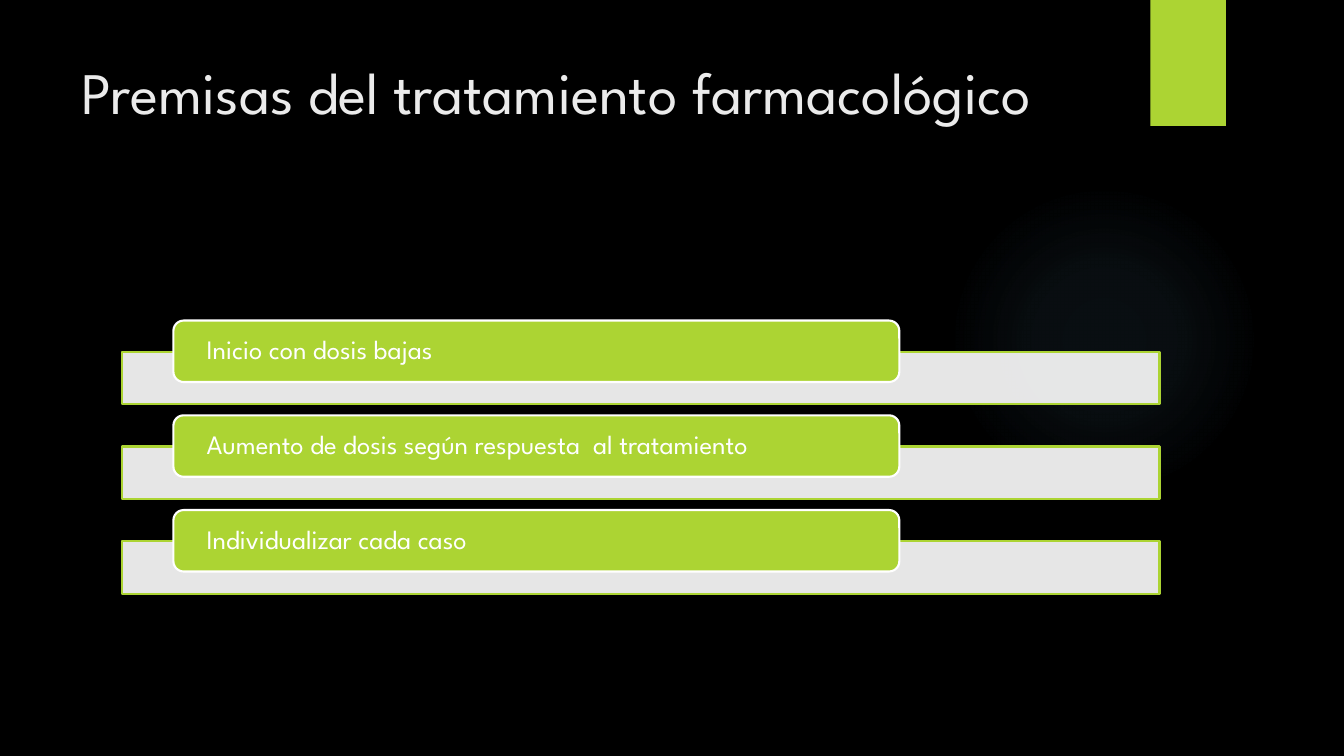
from lxml import etree
from pptx import Presentation
from pptx.dml.color import RGBColor
from pptx.enum.shapes import MSO_SHAPE
from pptx.enum.text import MSO_ANCHOR, MSO_AUTO_SIZE, PP_ALIGN
from pptx.oxml import parse_xml
from pptx.oxml.ns import nsdecls, qn
from pptx.util import Pt

RECTANGLE = MSO_SHAPE.RECTANGLE
ROUNDED = MSO_SHAPE.ROUNDED_RECTANGLE
OVAL = MSO_SHAPE.OVAL
TOP, MIDDLE = MSO_ANCHOR.TOP, MSO_ANCHOR.MIDDLE
LEFT = PP_ALIGN.LEFT
NO_AUTOFIT = MSO_AUTO_SIZE.NONE

BLACK = RGBColor(0x00, 0x00, 0x00)
WHITE = RGBColor(0xFF, 0xFF, 0xFF)
LIME = RGBColor(0xAC, 0xD4, 0x33)
PALE = RGBColor(0xEB, 0xEB, 0xEB)
SKY = RGBColor(0x7A, 0xC4, 0xF0)

FONT = "League Spartan"
EMU_PER_PX = 9144  # 100 px to the inch
TITLE_ONLY = 5

TITLE = "Premisas del tratamiento farmacológico"
PREMISES = [
    "Inicio con dosis bajas",
    "Aumento de dosis según respuesta  al tratamiento",
    "Individualizar cada caso",
]
FIRST_PILL_TOP = 318
ROW_PITCH = 94
BAR_DROP = 31


def px(length):
    return length * EMU_PER_PX


class SlideBuilder:
    def __init__(self, presentation):
        layout = presentation.slide_layouts[TITLE_ONLY]
        self.slide = presentation.slides.add_slide(layout)
        background = self.slide.background.fill
        background.solid()
        background.fore_color.rgb = BLACK

    def set_text(self, shape, text, size, color, anchor, inset_x, inset_y, spacing):
        frame = shape.text_frame
        frame.text = text
        frame.word_wrap = True
        frame.auto_size = NO_AUTOFIT
        frame.vertical_anchor = anchor
        frame.margin_left = frame.margin_right = px(inset_x)
        frame.margin_top = frame.margin_bottom = px(inset_y)
        paragraph = frame.paragraphs[0]
        paragraph.alignment = LEFT
        paragraph.line_spacing = spacing
        font = paragraph.runs[0].font
        font.name, font.size, font.color.rgb = FONT, Pt(size), color

    def title(self, text, left, top, width, height):
        title = self.slide.shapes.title
        title.left, title.top = px(left), px(top)
        title.width, title.height = px(width), px(height)
        self.set_text(title, text, 42, PALE, TOP, 10, 5, 1.0)

    def block(self, kind, left, top, width, height, fill, line=None, opacity=100):
        shape = self.slide.shapes.add_shape(
            kind, px(left), px(top), px(width), px(height))
        shape.shadow.inherit = False
        shape.fill.solid()
        shape.fill.fore_color.rgb = fill
        if opacity < 100:
            color = shape._element.spPr.find(qn("a:solidFill")).find(qn("a:srgbClr"))
            etree.SubElement(color, qn("a:alpha"), val=str(opacity * 1000))
        if line is None:
            shape.line.fill.background()
        else:
            shape.line.color.rgb = line
            shape.line.width = Pt(1.5)
        return shape

    def glow(self, left, top, diameter, color, stops):
        """Draw a disc fading outwards; stops are (position, opacity) percentages."""
        disc = self.block(OVAL, left, top, diameter, diameter, color)
        stop_xml = "".join(
            f'<a:gs pos="{position * 1000}"><a:srgbClr val="{color}">'
            f'<a:alpha val="{opacity * 1000}"/></a:srgbClr></a:gs>'
            for position, opacity in stops)
        gradient = parse_xml(
            f'<a:gradFill {nsdecls("a")} rotWithShape="1"><a:gsLst>{stop_xml}</a:gsLst>'
            '<a:path path="circle"><a:fillToRect l="50000" t="50000" r="50000" b="50000"/>'
            '</a:path></a:gradFill>')
        properties = disc._element.spPr
        properties.replace(properties.find(qn("a:solidFill")), gradient)

    def premise(self, text, top):
        self.block(RECTANGLE, 121, top + BAR_DROP, 1029, 52, WHITE, LIME, 90)
        pill = self.block(ROUNDED, 172, top, 720, 61, LIME, WHITE)
        self.set_text(pill, text, 19, WHITE, MIDDLE, 30, 0, 0.9)


def main():
    presentation = Presentation()
    presentation.slide_width, presentation.slide_height = px(1333), px(750)
    builder = SlideBuilder(presentation)
    builder.glow(941, 183, 308, SKY, [(0, 7), (36, 6), (69, 0), (100, 0)])
    builder.block(RECTANGLE, 1141, 0, 75, 125, LIME)
    builder.title(TITLE, 71, 50, 1029, 153)
    for row, text in enumerate(PREMISES):
        builder.premise(text, FIRST_PILL_TOP + row * ROW_PITCH)
    presentation.save("out.pptx")


if __name__ == "__main__":
    main()
